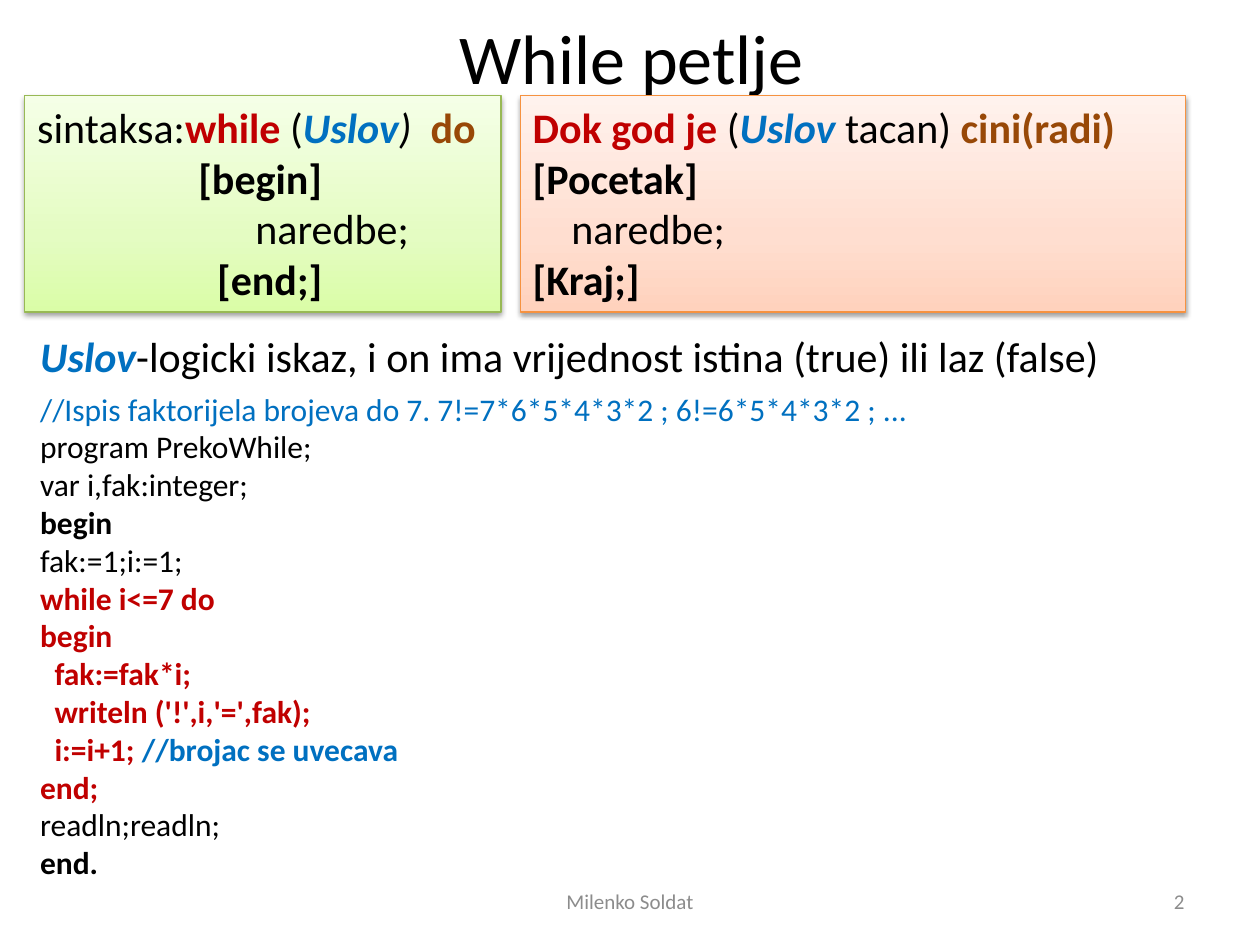
from copy import deepcopy
from dataclasses import dataclass

from lxml import etree
from pptx import Presentation
from pptx.dml.color import RGBColor
from pptx.enum.shapes import MSO_SHAPE
from pptx.enum.text import MSO_ANCHOR, PP_ALIGN
from pptx.oxml.ns import qn
from pptx.util import Cm, Pt

RECTANGLE = MSO_SHAPE.RECTANGLE
TOP, MIDDLE = MSO_ANCHOR.TOP, MSO_ANCHOR.MIDDLE
LEFT, CENTER, RIGHT = PP_ALIGN.LEFT, PP_ALIGN.CENTER, PP_ALIGN.RIGHT
BLANK_LAYOUT = 6


@dataclass(frozen=True)
class Theme:
    font: str = "Calibri"
    title_size: int = 40
    body_size: int = 24
    code_size: int = 18
    footer_size: int = 12
    black: str = "000000"
    red: str = "C00000"
    blue: str = "0070C0"
    brown: str = "984807"
    gray: str = "8C8C8C"
    green_line: str = "98B955"
    orange_line: str = "F69240"
    green_stops: tuple = ("DAFDA7", "E4FCC2", "F5FFE7")
    orange_stops: tuple = ("FFD2BD", "FFDED0", "FFF2ED")


THEME = Theme()


def run(text, color=THEME.black, bold=False, italic=False):
    return text, color, bold, italic


def line(*runs, indent=0):
    """Describe one paragraph; the indent is in centimetres."""
    return runs, indent


def write_text(shape, lines, size, align=LEFT, anchor=TOP):
    frame = shape.text_frame
    frame.word_wrap = True
    frame.vertical_anchor = anchor
    for index, (runs, indent) in enumerate(lines):
        paragraph = frame.add_paragraph() if index else frame.paragraphs[0]
        paragraph.alignment = align
        if indent:
            properties = paragraph._p.get_or_add_pPr()
            properties.set("marL", str(Cm(indent)))
            properties.set("indent", "0")
        for text, color, bold, italic in runs:
            part = paragraph.add_run()
            part.text = text
            font = part.font
            font.name, font.size = THEME.font, Pt(size)
            font.bold, font.italic = bold, italic
            font.color.rgb = RGBColor.from_string(color)


def add_text(slide, box, lines, size, **layout):
    shape = slide.shapes.add_textbox(*map(Cm, box))
    write_text(shape, lines, size, **layout)


def fill_gradient(shape, colors):
    """Run three colours from the bottom edge to the top."""
    shape.fill.gradient()
    shape.fill.gradient_angle = 90
    stop_list = shape._element.spPr.find(".//" + qn("a:gsLst"))
    stop_list.insert(1, deepcopy(stop_list[0]))
    for stop, position, color in zip(shape.fill.gradient_stops, (0, 0.35, 1), colors):
        stop.position = position
        stop.color.rgb = RGBColor.from_string(color)


def add_soft_shadow(shape):
    shape.shadow.inherit = False
    effects = shape._element.spPr.find(qn("a:effectLst"))
    shadow = etree.SubElement(effects, qn("a:outerShdw"), blurRad=str(Pt(3.1)),
                              dist=str(Pt(1.6)), dir="5400000", rotWithShape="0")
    color = etree.SubElement(shadow, qn("a:srgbClr"), val=THEME.black)
    etree.SubElement(color, qn("a:alpha"), val="38000")


def add_panel(slide, box, lines, stops, border):
    shape = slide.shapes.add_shape(RECTANGLE, *map(Cm, box))
    fill_gradient(shape, stops)
    shape.line.color.rgb = RGBColor.from_string(border)
    shape.line.width = Pt(0.75)
    add_soft_shadow(shape)
    write_text(shape, lines, THEME.body_size)


def add_syntax_panels(slide, box):
    """Place the syntax and its reading side by side in the box."""
    left, top, width, height = box
    syntax_width, gap = 9.6, 0.39
    syntax = [
        line(run("sintaksa:"), run("while", THEME.red, True), run(" ("),
             run("Uslov", THEME.blue, True, True), run(")  ", italic=True),
             run("do", THEME.brown, True)),
        line(run("[begin]", bold=True), indent=3.25),
        line(run("naredbe;"), indent=4.4),
        line(run("[end;]", bold=True), indent=3.63),
    ]
    reading = [
        line(run("Dok god je ", THEME.red, True), run("("),
             run("Uslov ", THEME.blue, True, True), run("tacan) "),
             run("cini(radi)", THEME.brown, True)),
        line(run("[Pocetak]", bold=True)),
        line(run("naredbe;"), indent=0.78),
        line(run("[Kraj;]", bold=True)),
    ]
    add_panel(slide, (left, top, syntax_width, height), syntax,
              THEME.green_stops, THEME.green_line)
    offset = syntax_width + gap
    add_panel(slide, (left + offset, top, width - offset, height), reading,
              THEME.orange_stops, THEME.orange_line)


def add_example(slide, box):
    """Place the condition note with the sample program under it."""
    left, top, width, height = box
    note_height, code_offset, code_width = 1.28, 1.2, 19.74
    note = line(run("Uslov", THEME.blue, True, True),
                run("-logicki iskaz, i on ima vrijednost istina (true) ili laz (false)"))
    add_text(slide, (left, top, width, note_height), [note], THEME.body_size)

    def loop(text, *more, indent=0):
        return line(run(text, THEME.red, True), *more, indent=indent)

    step = 0.29
    code = [
        line(run("//Ispis faktorijela brojeva do 7. 7!=7*6*5*4*3*2 ; 6!=6*5*4*3*2 ; ...",
                 THEME.blue)),
        line(run("program PrekoWhile;")),
        line(run("var i,fak:integer;")),
        line(run("begin", bold=True)),
        line(run("fak:=1;i:=1;")),
        loop("while i<=7 do"),
        loop("begin"),
        loop("fak:=fak*i;", indent=step),
        loop("writeln ('!',i,'=',fak);", indent=step),
        loop("i:=i+1; ", run("//brojac se uvecava", THEME.blue, True), indent=step),
        loop("end;"),
        line(run("readln;readln;")),
        line(run("end.", bold=True)),
    ]
    add_text(slide, (left, top + code_offset, code_width, height - code_offset),
             code, THEME.code_size)


def add_footer(slide, box):
    left, top, width, height = box
    author_width, number_width = 8.04, 5.93
    add_text(slide, (left, top, author_width, height),
             [line(run("Milenko Soldat", THEME.gray))],
             THEME.footer_size, align=CENTER, anchor=MIDDLE)
    add_text(slide, (left + width - number_width, top, number_width, height),
             [line(run("2", THEME.gray))],
             THEME.footer_size, align=RIGHT, anchor=MIDDLE)


def main():
    presentation = Presentation()
    presentation.slide_width, presentation.slide_height = Cm(25.4), Cm(19.05)
    slide = presentation.slides.add_slide(presentation.slide_layouts[BLANK_LAYOUT])
    add_text(slide, (1.3, 0.13, 22.86, 2), [line(run("While petlje"))],
             THEME.title_size, align=CENTER, anchor=MIDDLE)
    add_syntax_panels(slide, (0.5, 1.93, 23.4, 4.36))
    add_example(slide, (0.56, 6.53, 23.34, 11.46))
    add_footer(slide, (8.68, 17.66, 15.45, 1.01))
    presentation.save("out.pptx")


if __name__ == "__main__":
    main()
